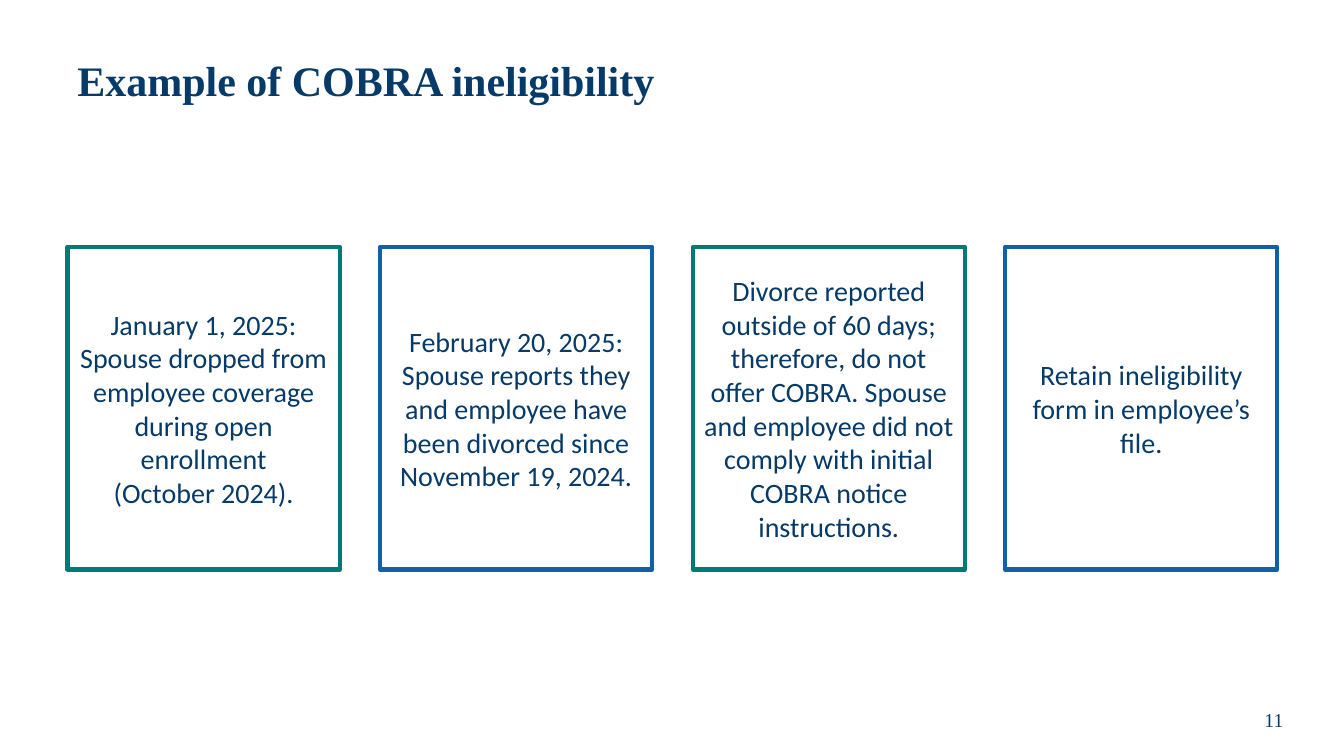
from pptx import Presentation
from pptx.dml.color import RGBColor
from pptx.enum.shapes import MSO_SHAPE
from pptx.enum.text import MSO_ANCHOR, PP_ALIGN
from pptx.util import Inches, Pt

NAVY = RGBColor(0x06, 0x3A, 0x68)
TEAL = RGBColor(0x00, 0x7A, 0x77)
BLUE = RGBColor(0x12, 0x60, 0xA7)

STEPS = [
    ["January 1, 2025: Spouse dropped from employee coverage during open enrollment",
     "(October 2024)."],
    ["February 20, 2025: Spouse reports they and employee have been divorced since "
     "November 19, 2024."],
    ["Divorce reported outside of 60 days; therefore, do not offer COBRA. Spouse and "
     "employee did not comply with initial COBRA notice instructions."],
    ["Retain ineligibility form in employee’s file."],
]


def write(frame, lines, font, size, align, bold=False):
    frame.word_wrap = True
    frame.vertical_anchor = MSO_ANCHOR.MIDDLE
    for index, line in enumerate(lines):
        paragraph = frame.add_paragraph() if index else frame.paragraphs[0]
        paragraph.alignment = align
        run = paragraph.add_run()
        run.text = line
        run.font.name = font
        run.font.size = Pt(size)
        run.font.bold = bold
        run.font.color.rgb = NAVY


prs = Presentation()
prs.slide_width = Inches(13.33)
prs.slide_height = Inches(7.5)
slide = prs.slides.add_slide(prs.slide_layouts[6])

heading = slide.shapes.add_textbox(Inches(0.67), Inches(0.25), Inches(12), Inches(1.15))
write(heading.text_frame, ["Example of COBRA ineligibility"],
      "Times New Roman", 30, PP_ALIGN.LEFT, bold=True)
heading.text_frame.paragraphs[0].line_spacing = 0.9

for position, lines in enumerate(STEPS):
    step = slide.shapes.add_shape(MSO_SHAPE.RECTANGLE, Inches(0.67 + 3.1 * position),
                                  Inches(2.45), Inches(2.7), Inches(3.2))
    step.shadow.inherit = False
    step.fill.background()
    step.line.color.rgb = BLUE if position % 2 else TEAL
    step.line.width = Pt(3)
    frame = step.text_frame
    frame.margin_left = frame.margin_right = Inches(0.1)
    frame.margin_top = frame.margin_bottom = Inches(0.1)
    write(frame, lines, "Calibri", 20, PP_ALIGN.CENTER)

page_number = slide.shapes.add_textbox(Inches(12.05), Inches(6.89), Inches(1.17), Inches(0.5))
write(page_number.text_frame, ["11"], "Times New Roman", 14, PP_ALIGN.CENTER)

prs.save("out.pptx")
